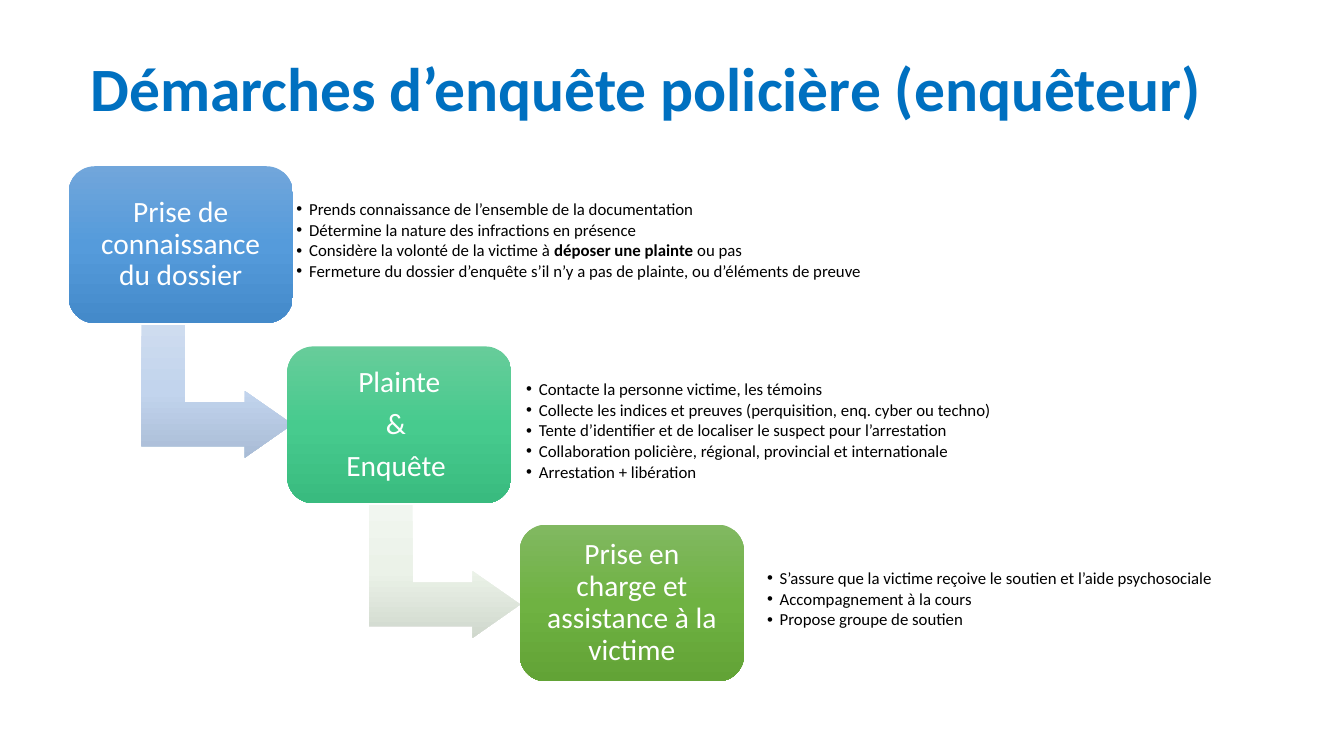
import pptx
import pptx.dml.color
import pptx.enum.shapes
import pptx.enum.text
import pptx.oxml
import pptx.oxml.ns
import pptx.util
from pptx.util import Cm

Anchor = pptx.enum.text.MSO_ANCHOR
Align = pptx.enum.text.PP_ALIGN
Shape = pptx.enum.shapes.MSO_SHAPE
NAMESPACE = pptx.oxml.ns.nsdecls("a")

THEME = {
    "font": "Calibri",
    "title": {"size": 44, "color": "0070C0"},
    "box": {"size": 21, "color": "FFFFFF"},
    "list": {"size": 12, "color": "000000"},
    "blue": ("71A6DB", "559BDB", "448ACA"),
    "teal": ("67CC9A", "47CB8E", "39BB7F"),
    "green": ("81B861", "6FB242", "62A336"),
    "blue arrow": ("CEDCEF", "C2D4ED", "A9BCD6"),
    "pale arrow": ("F1F6F0", "EBF2E8", "D0D8CD"),
}

STEPS = [
    {
        "box": (1.73, 4.19), "fill": "blue",
        "label": ["Prise de connaissance du dossier"],
        "arrow_left": 3.79, "arrow_fill": "blue arrow",
        "list": (7.34, 4.47, 16.59), "placeholder": 1,
        "points": [
            "Prends connaissance de l’ensemble de la documentation",
            "Détermine la nature des infractions en présence",
            "Considère la volonté de la victime à |déposer une plainte |ou pas",
            "Fermeture du dossier d’enquête s’il n’y a pas de plainte, ou d’éléments de preuve",
        ],
    },
    {
        "box": (7.24, 8.73), "fill": "teal",
        "label": ["Plainte", "& ", "Enquête "],
        "arrow_left": 9.53, "arrow_fill": "pale arrow",
        "list": (13.13, 9.27, 16.18), "placeholder": 2,
        "points": [
            "Contacte la personne victime, les témoins",
            "Collecte les indices et preuves (perquisition, enq. cyber ou techno)",
            "Tente d’identifier et de localiser le suspect pour l’arrestation",
            "Collaboration policière, régional, provincial et internationale",
            "Arrestation + libération",
        ],
    },
    {
        "box": (13.1, 13.22), "fill": "green",
        "label": ["Prise en charge et assistance à la victime"],
        "arrow_left": None,
        "list": (19.2, 13.51, 12.34), "placeholder": 3,
        "points": [
            "S’assure que la victime reçoive le soutien et l’aide psychosociale",
            "Accompagnement à la cours",
            "Propose groupe de soutien",
        ],
    },
]


def write_text(shape, lines, style, align, inset, space_after, bold=False):
    frame = shape.text_frame
    frame_format = {
        "word_wrap": True, "auto_size": pptx.enum.text.MSO_AUTO_SIZE.NONE,
        "vertical_anchor": Anchor.MIDDLE,
        "margin_left": inset, "margin_right": inset,
        "margin_top": inset, "margin_bottom": inset,
    }
    for name, value in frame_format.items():
        setattr(frame, name, value)
    for index, line in enumerate(lines):
        para = frame.add_paragraph() if index else frame.paragraphs[0]
        para_format = {
            "alignment": align, "line_spacing": 0.9,
            "space_before": pptx.util.Pt(0),
            "space_after": pptx.util.Pt(space_after),
        }
        for name, value in para_format.items():
            setattr(para, name, value)
        for part, words in enumerate(line.split("|")):
            span = para.add_run()
            span.text = words
            span_format = {
                "name": THEME["font"], "bold": bold or part == 1,
                "size": pptx.util.Pt(THEME[style]["size"]),
            }
            for name, value in span_format.items():
                setattr(span.font, name, value)
            span.font.color.rgb = pptx.dml.color.RGBColor.from_string(THEME[style]["color"])


def add_gradient_shape(kind, left, top, width, height, colors, adjustments):
    shape = page.shapes.add_shape(kind, Cm(left), Cm(top), Cm(width), Cm(height))
    shape.shadow.inherit = False
    shape.line.fill.background()
    for index, value in enumerate(adjustments):
        shape.adjustments[index] = value
    shape.fill.gradient()
    shape.fill.gradient_angle = 270
    gradient = shape.element.spPr.find(pptx.oxml.ns.qn("a:gradFill"))
    gradient.set("rotWithShape", "0")
    stops = gradient.find(pptx.oxml.ns.qn("a:gsLst"))
    for stop in list(stops):
        stops.remove(stop)
    for index, color in enumerate(colors):
        stops.append(pptx.oxml.parse_xml(
            f'<a:gs {NAMESPACE} pos="{index * 50000}"><a:srgbClr val="{color}"/></a:gs>'))
    return shape


deck = pptx.Presentation()
deck.slide_width, deck.slide_height = Cm(33.87), Cm(19.05)
page = deck.slides.add_slide(deck.slide_layouts.get_by_name("Comparison"))
holders = {holder.placeholder_format.idx: holder for holder in page.placeholders}

title = page.shapes.title
title.left, title.top, title.width, title.height = Cm(2.03), Cm(0.46), Cm(29.21), Cm(3.68)
write_text(title, ["Démarches d’enquête policière (enquêteur)"], "title",
           Align.LEFT, Cm(0.25), 0, bold=True)

for step in STEPS:
    box_left, box_top = step["box"]
    if step["arrow_left"] is not None:
        arrow = add_gradient_shape(
            Shape.BENT_UP_ARROW, step["arrow_left"], box_top + 3.76, 3.35, 3.81,
            THEME[step["arrow_fill"]], (0.328, 0.25, 0.358))
        arrow.rotation = 90
    box = add_gradient_shape(Shape.ROUNDED_RECTANGLE, box_left, box_top, 5.65, 3.95,
                             THEME[step["fill"]], (0.167,))
    write_text(box, step["label"], "box", Align.CENTER, Cm(0.43), 7.35)

    points = holders[step["placeholder"]]
    list_left, list_top, list_width = step["list"]
    points.left, points.top = Cm(list_left), Cm(list_top)
    points.width, points.height = Cm(list_width), Cm(3.2)
    write_text(points, step["points"], "list", Align.LEFT, Cm(0.13), 1.8)
    for para in points.text_frame.paragraphs:
        para.level = 1
        properties = para._p.get_or_add_pPr()
        properties.set("marL", str(Cm(0.32)))
        properties.set("indent", str(-Cm(0.32)))
        for bullet in ('buFont {} typeface="Arial"', 'buChar {} char="•"'):
            properties.append(pptx.oxml.parse_xml(f"<a:{bullet.format(NAMESPACE)}/>"))

for holder in list(page.placeholders):
    if not holder.text_frame.text:
        holder.element.getparent().remove(holder.element)

deck.save("out.pptx")
